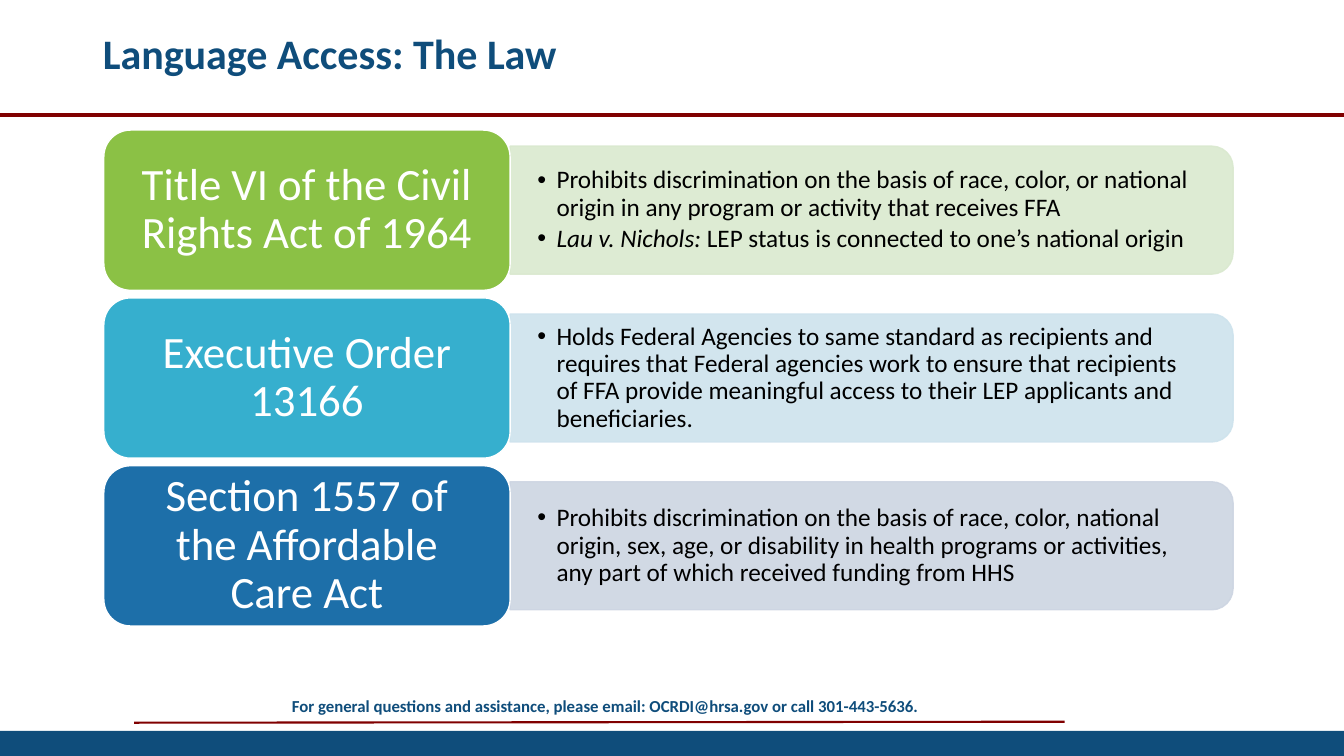
from lxml import etree
from pptx import Presentation
from pptx.dml.color import RGBColor
from pptx.enum.shapes import MSO_CONNECTOR, MSO_SHAPE
from pptx.enum.text import MSO_ANCHOR, MSO_AUTO_SIZE, PP_ALIGN
from pptx.oxml.ns import qn
from pptx.util import Inches, Pt

STRAIGHT = MSO_CONNECTOR.STRAIGHT
RECT = MSO_SHAPE.RECTANGLE
ROUND_RECT = MSO_SHAPE.ROUNDED_RECTANGLE
ROUND_TOP = MSO_SHAPE.ROUND_2_SAME_RECTANGLE
MIDDLE = MSO_ANCHOR.MIDDLE
TOP = MSO_ANCHOR.TOP
NO_FIT = MSO_AUTO_SIZE.NONE
LEFT, CENTER = PP_ALIGN.LEFT, PP_ALIGN.CENTER

NAVY, MAROON, WHITE, BLACK = "0F4D7B", "800000", "FFFFFF", "000000"
COMPARISON_LAYOUT = 4
ROW_TOP, ROW_PITCH = 1.29, 1.665
LABEL_LEFT, LABEL_WIDTH, LABEL_HEIGHT = 1.03, 4.03, 1.59
PANEL_WIDTH, PANEL_HEIGHT = 7.17, 1.27
LIST_WIDTH, LIST_HEIGHT = 7.11, 1.15

LAWS = [
    ("Title VI of the Civil Rights Act of 1964", "8BC145", "DAE9CF", [
        [("Prohibits discrimination on the basis of race, color, or national "
          "origin in any program or activity that receives FFA", False)],
        [("Lau v. Nichols: ", True),
         ("LEP status is connected to one’s national origin", False)]]),
    ("Executive Order 13166", "36AFCE", "CEE3ED", [
        [("Holds Federal Agencies to same standard as recipients and requires "
          "that Federal agencies work to ensure that recipients of FFA provide "
          "meaningful access to their LEP applicants and beneficiaries.", False)]]),
    ("Section 1557 of the Affordable Care Act", "1D6FA9", "CDD5E2", [
        [("Prohibits discrimination on the basis of race, color, national "
          "origin, sex, age, or disability in health programs or activities, "
          "any part of which received funding from HHS", False)]]),
]


def color(hex_code):
    """Turn a hex string into a colour."""
    return RGBColor.from_string(hex_code)


def add_text(paragraph, text, size=18, hex_code=BLACK, bold=False, italic=False):
    """Add a formatted run to a paragraph."""
    run = paragraph.add_run()
    run.text = text
    run.font.name = "Calibri"
    run.font.size = Pt(size)
    run.font.bold = bold
    run.font.italic = italic
    run.font.color.rgb = color(hex_code)


def add_bullet(paragraph):
    """Give a paragraph a hanging round bullet."""
    properties = paragraph._p.get_or_add_pPr()
    properties.set("marL", str(Inches(0.19)))
    properties.set("indent", str(-Inches(0.19)))
    etree.SubElement(properties, qn("a:buChar"), char="•")


class SlideBuilder:
    """Hold the slide and draw its elements in one style."""

    def __init__(self, slide):
        """Keep the slide and its list placeholders."""
        self.slide = slide
        self.shapes = slide.shapes
        self.lists = [holder for holder in slide.placeholders
                      if holder.placeholder_format.idx > 0]

    def place(self, holder, left, top, width, height):
        """Position a shape."""
        holder.left, holder.top = Inches(left), Inches(top)
        holder.width, holder.height = Inches(width), Inches(height)

    def frame(self, shape, inset_x=0.1, inset_y=0.05, anchor=MIDDLE):
        """Prepare a wrapped text frame."""
        frame = shape.text_frame
        frame.word_wrap = True
        frame.auto_size = NO_FIT
        frame.vertical_anchor = anchor
        frame.margin_left = frame.margin_right = Inches(inset_x)
        frame.margin_top = frame.margin_bottom = Inches(inset_y)
        return frame

    def title(self, text):
        """Fill the title placeholder."""
        heading = self.shapes.title
        self.place(heading, 0.92, -0.17, 11.5, 1.45)
        paragraph = self.frame(heading).paragraphs[0]
        paragraph.alignment = LEFT
        paragraph.line_spacing = 0.9
        add_text(paragraph, text, size=30, hex_code=NAVY, bold=True)

    def rule(self, start, end, weight):
        """Draw a maroon line."""
        rule = self.shapes.add_connector(
            STRAIGHT, *(Inches(value) for value in start + end))
        rule.line.color.rgb = color(MAROON)
        rule.line.width = Pt(weight)
        etree.SubElement(rule._element.spPr, qn("a:effectLst"))

    def block(self, kind, box, fill, outline=None):
        """Draw a filled shape."""
        block = self.shapes.add_shape(kind, *(Inches(value) for value in box))
        block.shadow.inherit = False
        block.fill.solid()
        block.fill.fore_color.rgb = color(fill)
        if outline:
            block.line.color.rgb = color(outline)
            block.line.width = Pt(1)
        else:
            block.line.fill.background()
        return block

    def panel(self, left, middle, fill):
        """Draw a translucent panel rounded on its right side."""
        box = (left + (PANEL_WIDTH - PANEL_HEIGHT) / 2, middle - PANEL_WIDTH / 2,
               PANEL_HEIGHT, PANEL_WIDTH)
        panel = self.block(ROUND_TOP, box, fill, outline=fill)
        panel.rotation = 90
        for tint in panel._element.spPr.iter(qn("a:srgbClr")):
            etree.SubElement(tint, qn("a:alpha"), val="90000")

    def bullets(self, left, middle, items):
        """Fill the next list placeholder and bring it to the front."""
        holder = self.lists.pop(0)
        self.place(holder, left, middle - LIST_HEIGHT / 2, LIST_WIDTH, LIST_HEIGHT)
        frame = self.frame(holder, 0.27, 0.14)
        for number, runs in enumerate(items):
            paragraph = frame.add_paragraph() if number else frame.paragraphs[0]
            paragraph.level = 1
            paragraph.alignment = LEFT
            paragraph.line_spacing = 0.9
            paragraph.space_before = Pt(0)
            paragraph.space_after = Pt(3)
            add_bullet(paragraph)
            for text, italic in runs:
                add_text(paragraph, text, italic=italic)
        self.shapes._spTree.append(holder._element)

    def label(self, top, text, fill):
        """Draw a rounded label with its text."""
        box = (LABEL_LEFT, top, LABEL_WIDTH, LABEL_HEIGHT)
        label = self.block(ROUND_RECT, box, fill, outline=WHITE)
        paragraph = self.frame(label, 0.21, 0.15).paragraphs[0]
        paragraph.alignment = CENTER
        paragraph.line_spacing = 0.9
        add_text(paragraph, text, size=32, hex_code=WHITE)

    def contact(self, text):
        """Write the contact line above the footer."""
        contact = self.shapes.add_textbox(
            Inches(1.67), Inches(6.85), Inches(8.67), Inches(0.3))
        paragraph = self.frame(contact, anchor=TOP).paragraphs[0]
        paragraph.alignment = CENTER
        add_text(paragraph, text, size=12, hex_code=NAVY, bold=True)

    def remove_empty_lists(self):
        """Remove the placeholders that were not filled."""
        for holder in self.lists:
            self.shapes._spTree.remove(holder._element)


def main():
    """Build and save the slide."""
    deck = Presentation()
    deck.slide_width, deck.slide_height = Inches(13.33), Inches(7.5)
    builder = SlideBuilder(deck.slides.add_slide(deck.slide_layouts[COMPARISON_LAYOUT]))

    builder.rule((1.33, 7.17), (10.56, 7.16), 1.5)
    builder.block(RECT, (0, 7.25, 13.33, 0.25), NAVY)
    builder.contact("For general questions and assistance, please email: "
                    "OCRDI@hrsa.gov or call 301-443-5636.")
    builder.rule((0, 1.14), (13.33, 1.14), 3)
    builder.title("Language Access: The Law")

    panel_left = LABEL_LEFT + LABEL_WIDTH
    for row, (law, label_fill, panel_fill, items) in enumerate(LAWS):
        top = ROW_TOP + row * ROW_PITCH
        middle = top + LABEL_HEIGHT / 2
        builder.panel(panel_left, middle, panel_fill)
        builder.bullets(panel_left, middle, items)
        builder.label(top, law, label_fill)

    builder.remove_empty_lists()
    deck.save("out.pptx")


if __name__ == "__main__":
    main()
